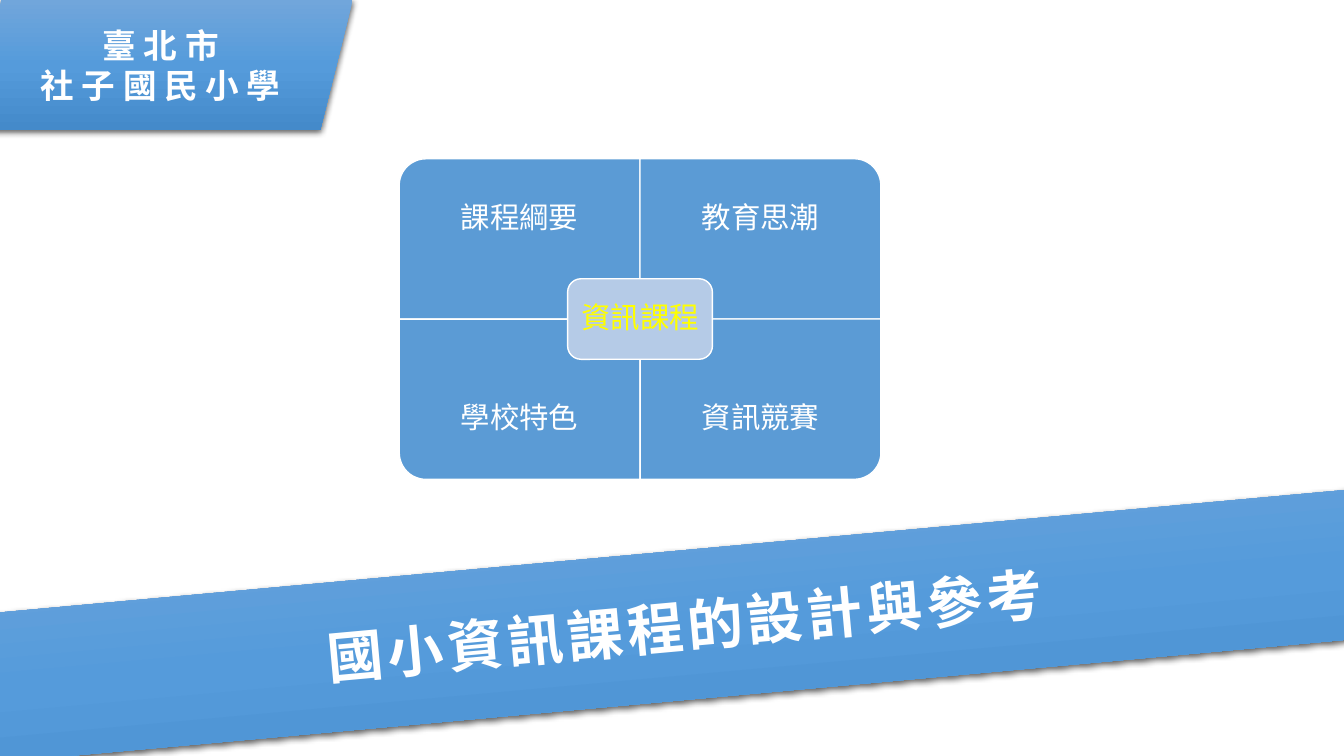
from copy import deepcopy

from lxml.etree import SubElement
from pptx import Presentation
from pptx.dml.color import RGBColor
from pptx.enum.shapes import MSO_SHAPE as Shape
from pptx.enum.text import MSO_ANCHOR as Anchor, MSO_AUTO_SIZE as AutoSize, PP_ALIGN as Align
from pptx.oxml.ns import qn
from pptx.util import Cm, Pt

WHITE = RGBColor(0xFF, 0xFF, 0xFF)
YELLOW = RGBColor(0xFF, 0xFF, 0x00)
BLUE = RGBColor(0x5B, 0x9B, 0xD5)
PALE_BLUE = RGBColor(0xB5, 0xCB, 0xE7)
BANNER_BLUES = (
    RGBColor(0x71, 0xA6, 0xDB),
    RGBColor(0x55, 0x9B, 0xDB),
    RGBColor(0x44, 0x8A, 0xCA),
)


class SlideBuilder:
    font_name = "Noto Sans CJK SC"

    def __init__(self, page):
        self.page = page
        self.group = page.shapes.add_group_shape()

    def place(self, shape, left, top, width, height):
        frame = dict(left=left, top=top, width=width, height=height)
        for name, value in frame.items():
            setattr(shape, name, Cm(value))

    def set_text(self, shape, lines, size, color=WHITE, bold=False, inset=None,
                 spacing=0, line_spacing=1.0, space_after=0):
        frame = shape.text_frame
        frame_format = dict(word_wrap=True, auto_size=AutoSize.NONE,
                            vertical_anchor=Anchor.MIDDLE)
        if inset is not None:
            for side in ("left", "top", "right", "bottom"):
                frame_format[f"margin_{side}"] = Cm(inset)
        for name, value in frame_format.items():
            setattr(frame, name, value)

        para_format = dict(alignment=Align.CENTER, line_spacing=line_spacing,
                           space_before=Pt(0), space_after=Pt(space_after))
        font_format = dict(size=Pt(size), bold=bold, name=self.font_name)
        for index, line in enumerate(lines):
            para = frame.add_paragraph() if index else frame.paragraphs[0]
            for name, value in para_format.items():
                setattr(para, name, value)
            span = para.add_run()
            span.text = line
            span.font.color.rgb = color
            for name, value in font_format.items():
                setattr(span.font, name, value)
            properties = span.font._element
            SubElement(properties, qn("a:ea"), typeface=self.font_name)
            if spacing:
                properties.set("spc", str(spacing * 100))

    def style_banner(self, shape):
        """Give a shape the three-stop blue gradient and a soft shadow."""
        shape.fill.gradient()
        shape.fill.gradient_angle = 270
        stop_list = shape._element.spPr.find(qn("a:gradFill")).find(qn("a:gsLst"))
        stop_list.append(deepcopy(stop_list[0]))
        for index, (stop, color) in enumerate(zip(shape.fill.gradient_stops, BANNER_BLUES)):
            stop.position = index / 2
            stop.color.rgb = color
        shape.line.fill.background()
        shape.shadow.inherit = False
        effects = shape._element.spPr.find(qn("a:effectLst"))
        shadow = SubElement(effects, qn("a:outerShdw"), blurRad=str(Pt(4.5)),
                            dist=str(Pt(1.5)), dir="5400000", algn="ctr", rotWithShape="0")
        black = SubElement(shadow, qn("a:srgbClr"), val="000000")
        SubElement(black, qn("a:alpha"), val="63000")

    def title_banner(self, text, bounds, rotation):
        title = self.page.shapes.title
        self.place(title, *bounds)
        title.rotation = rotation
        self.style_banner(title)
        self.set_text(title, [text], 40, bold=True, spacing=3)

    def school_banner(self, lines, bounds):
        banner = self.page.shapes.add_shape(Shape.PARALLELOGRAM, *map(Cm, bounds))
        self.style_banner(banner)
        self.set_text(banner, lines, 24, bold=True)

    def panel(self, kind, center_x, center_y, width, height, fill, turn=0):
        # A quarter turn swaps the sides of the unrotated frame
        if turn % 180:
            width, height = height, width
        bounds = (center_x - width / 2, center_y - height / 2, width, height)
        panel = self.group.shapes.add_shape(kind, *map(Cm, bounds))
        panel.rotation = turn
        panel.shadow.inherit = False
        panel.fill.solid()
        panel.fill.fore_color.rgb = fill
        panel.line.color.rgb = WHITE
        panel.line.width = Pt(1)

    def label(self, text, bounds, inset, color=WHITE):
        box = self.group.shapes.add_textbox(*map(Cm, bounds))
        self.set_text(box, [text], 21, color, inset=inset, line_spacing=0.9, space_after=7)


def main():
    deck = Presentation()
    deck.slide_width, deck.slide_height = Cm(33.87), Cm(19.05)
    builder = SlideBuilder(deck.slides.add_slide(deck.slide_layouts[5]))

    # Banners
    builder.title_banner("國小資訊課程的設計與參考", (-0.28, 13.87, 35.08, 3.76), 354.8)
    builder.school_banner(["臺 北 市", "社 子 國 民 小 學"], (-0.79, 0, 9.68, 3.28))

    # Four quadrants around the matrix centre: column, row, rounded-corner turn
    center_x, center_y = 16.13, 8.04
    width, height, label_height = 6.07, 4.04, 3.04
    quadrants = [
        ("課程綱要", 0, 0, 270),
        ("教育思潮", 1, 0, 0),
        ("學校特色", 0, 1, 180),
        ("資訊競賽", 1, 1, 90),
    ]
    for text, column, row, turn in quadrants:
        left = center_x + (column - 1) * width
        top = center_y + (row - 1) * height
        builder.panel(Shape.ROUND_1_RECTANGLE, left + width / 2, top + height / 2,
                      width, height, BLUE, turn)
        label_top = top + row * (height - label_height)
        builder.label(text, (left, label_top, width, label_height), 0.41)

    # Core topic
    core_width, core_height = 3.65, 2.03
    builder.panel(Shape.ROUNDED_RECTANGLE, center_x, center_y,
                  core_width, core_height, PALE_BLUE)
    label_width, label_height = core_width - 0.2, core_height - 0.2
    builder.label("資訊課程", (center_x - label_width / 2, center_y - label_height / 2,
                           label_width, label_height), 0.23, YELLOW)

    deck.save("out.pptx")


if __name__ == "__main__":
    main()
